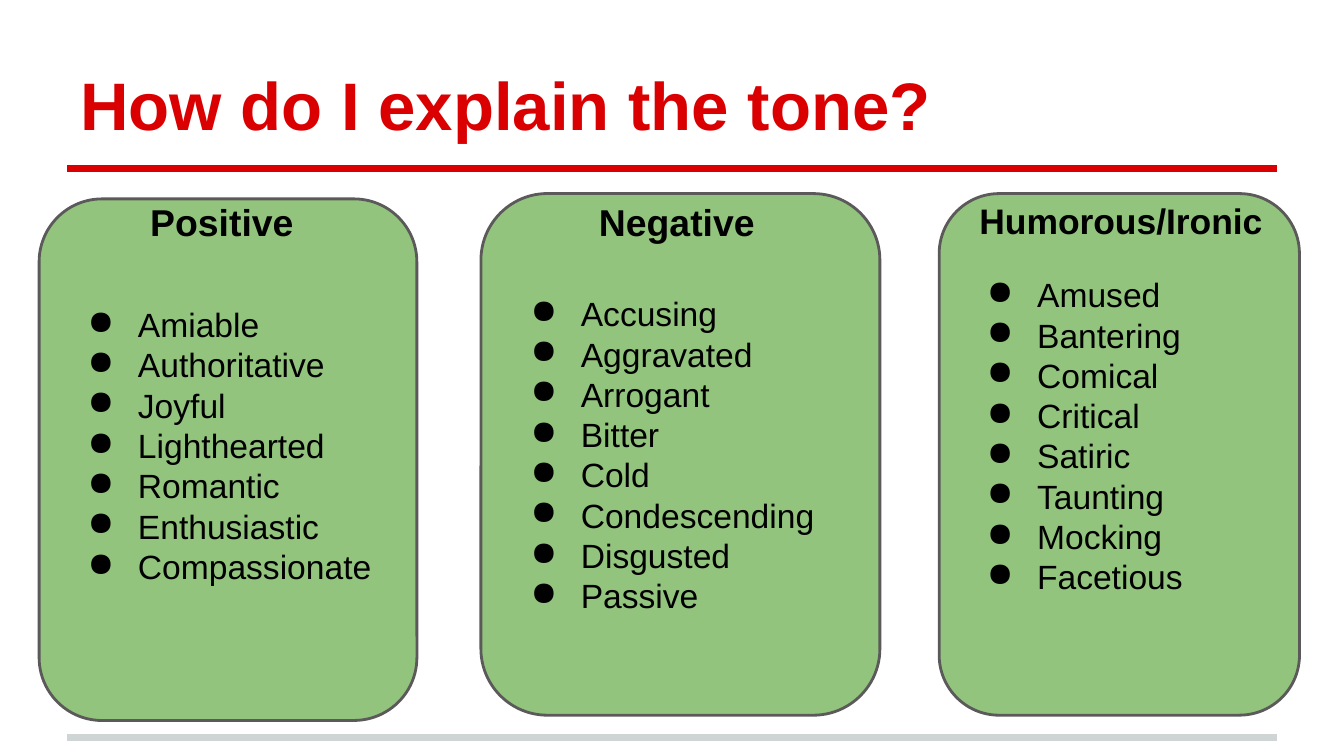
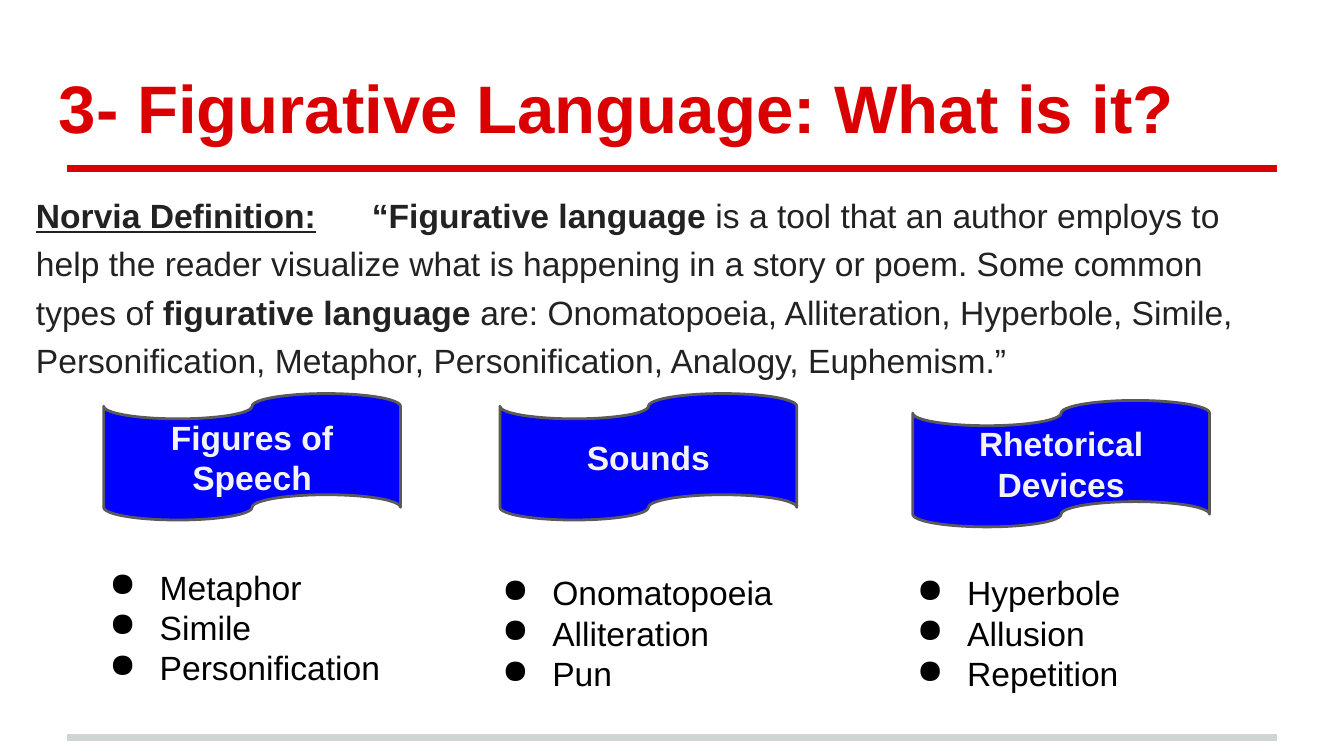
from lxml import etree
from pptx import Presentation
from pptx.dml.color import RGBColor
from pptx.enum.shapes import MSO_CONNECTOR, MSO_SHAPE
from pptx.enum.text import MSO_ANCHOR, MSO_AUTO_SIZE, PP_ALIGN
from pptx.oxml.ns import qn
from pptx.util import Cm, Pt

LEFT, CENTER = PP_ALIGN.LEFT, PP_ALIGN.CENTER
TOP, MIDDLE, BOTTOM = MSO_ANCHOR.TOP, MSO_ANCHOR.MIDDLE, MSO_ANCHOR.BOTTOM
ROUNDED, TAPE = MSO_SHAPE.ROUNDED_RECTANGLE, MSO_SHAPE.FLOWCHART_PUNCHED_TAPE
STRAIGHT = MSO_CONNECTOR.STRAIGHT
NO_FIT = MSO_AUTO_SIZE.NONE

FONT = "Arial"
RED, GREY, OUTLINE = "DA0002", "CFD4D4", "5B595A"
GREEN, BLUE = "93C47D", "0000FF"
BLACK, CHARCOAL, PALE = "000000", "222222", "F3F3F3"
INSET = 0.25
color = RGBColor.from_string


def add_span(para, text, size, ink, bold=False, underline=None):
    span = para.add_run()
    span.text = text
    span.font.name = FONT
    span.font.size = Pt(size)
    span.font.bold = bold
    span.font.underline = underline
    span.font.color.rgb = color(ink)


def fill_frame(frame, lines, size, ink, bold=False, anchor=TOP, align=LEFT, bullets=False):
    frame.word_wrap = True
    frame.auto_size = NO_FIT
    frame.vertical_anchor = anchor
    frame.margin_left = frame.margin_right = Cm(INSET)
    frame.margin_top = frame.margin_bottom = Cm(INSET)
    for index, line in enumerate(lines):
        para = frame.add_paragraph() if index else frame.paragraphs[0]
        para.alignment = align
        para.space_before = Pt(0)
        if bullets:
            props = para._p.get_or_add_pPr()
            props.set("marL", str(Cm(1.27)))
            props.set("indent", str(Cm(-0.95)))
            etree.SubElement(props, qn("a:buChar"), char="●")
        add_span(para, line, size, ink, bold)


deck = Presentation()
deck.slide_width, deck.slide_height = Cm(25.4), Cm(14.29)
pages = []
for layout, heading, left, top in [
    (5, "How do I explain the tone?", 1.27, 0.58),
    (1, "3- Figurative Language: What is it?", 0.86, 0.64),
]:
    page = deck.slides.add_slide(deck.slide_layouts[layout])
    pages.append(page)
    for y, ink in [(13.94, GREY), (3.18, RED)]:
        rule = page.shapes.add_connector(STRAIGHT, Cm(1.27), Cm(y), Cm(24.13), Cm(y))
        rule.line.color.rgb = color(ink)
        rule.line.width = Pt(4)
        etree.SubElement(rule._element.spPr, qn("a:effectLst"))
    title = page.shapes.title
    title.left, title.top, title.width, title.height = Cm(left), Cm(top), Cm(22.86), Cm(2.39)
    fill_frame(title.text_frame, [heading], 36, RED, bold=True, anchor=BOTTOM)

tone_page, language_page = pages

tones = [
    (0.74, 3.76, 7.14, 0.55, "Positive", 2.59, 4.04, 20,
     ["Amiable", "Authoritative", "Joyful", "Lighthearted", "Romantic",
      "Enthusiastic", "Compassionate"]),
    (9.09, 3.66, 7.54, 0, "Negative", 11.07, 4.04, 20,
     ["Accusing", "Aggravated", "Arrogant", "Bitter", "Cold",
      "Condescending", "Disgusted", "Passive"]),
    (17.75, 3.66, 6.81, 0.72, "Humorous/Ironic", 18.26, 6.3, 19,
     ["Amused", "Bantering", "Comical", "Critical", "Satiric",
      "Taunting", "Mocking", "Facetious"]),
]
for left, top, width, lift, name, name_left, name_width, size, words in tones:
    card = tone_page.shapes.add_shape(ROUNDED, Cm(left), Cm(top), Cm(width), Cm(9.86))
    card.shadow.inherit = False
    card.fill.solid()
    card.fill.fore_color.rgb = color(GREEN)
    card.line.color.rgb = color(OUTLINE)
    card.line.width = Pt(1.5)
    fill_frame(card.text_frame, words, 18, BLACK, anchor=MIDDLE, bullets=True)
    card.text_frame.margin_bottom = Cm(INSET + lift)
    box = tone_page.shapes.add_textbox(Cm(name_left), Cm(3.51), Cm(name_width), Cm(1.19))
    fill_frame(box.text_frame, [name], size, BLACK, bold=True)

devices = [
    (1.96, 7.44, "Figures of Speech", 1.5, 10.46, ["Metaphor", "Simile", "Personification"]),
    (9.45, 7.44, "Sounds", 8.92, 10.57, ["Onomatopoeia", "Alliteration", "Pun"]),
    (17.25, 7.57, "Rhetorical Devices", 16.76, 10.57, ["Hyperbole", "Allusion", "Repetition"]),
]
for left, top, name, list_left, list_top, words in devices:
    banner = language_page.shapes.add_shape(TAPE, Cm(left), Cm(top), Cm(5.61), Cm(2.39))
    banner.shadow.inherit = False
    banner.fill.solid()
    banner.fill.fore_color.rgb = color(BLUE)
    banner.line.color.rgb = color(OUTLINE)
    banner.line.width = Pt(1.5)
    fill_frame(banner.text_frame, [name], 18, PALE, bold=True, anchor=MIDDLE, align=CENTER)
    box = language_page.shapes.add_textbox(Cm(list_left), Cm(list_top), Cm(6.53), Cm(3.05))
    fill_frame(box.text_frame, words, 18, BLACK, bullets=True)

definition = language_page.placeholders[1]
definition.left, definition.top = Cm(0.43), Cm(3.28)
definition.width, definition.height = Cm(23.9), Cm(1.96)
fill_frame(definition.text_frame, [], 18, CHARCOAL)
para = definition.text_frame.paragraphs[0]
para.alignment = LEFT
para.line_spacing = 1.2
para.space_before = Pt(0)
props = para._p.get_or_add_pPr()
props.set("marL", "0")
props.set("indent", "0")
etree.SubElement(props, qn("a:buNone"))
tabs = etree.SubElement(props, qn("a:tabLst"))
etree.SubElement(tabs, qn("a:tab"), pos=str(Cm(6.4)), algn="l")
for text, bold, underline in [
    ("Norvia Definition:", True, True),
    ("\t“Figurative language", True, False),
    (" is a tool that an author employs to help the reader visualize what is happening "
     "in a story or poem. Some common types of ", False, False),
    ("figurative language", True, False),
    (" are: Onomatopoeia, Alliteration, Hyperbole, Simile, Personification, Metaphor, "
     "Personification, Analogy, Euphemism.”", False, False),
]:
    add_span(para, text, 18, CHARCOAL, bold, underline)

deck.save("out.pptx")
